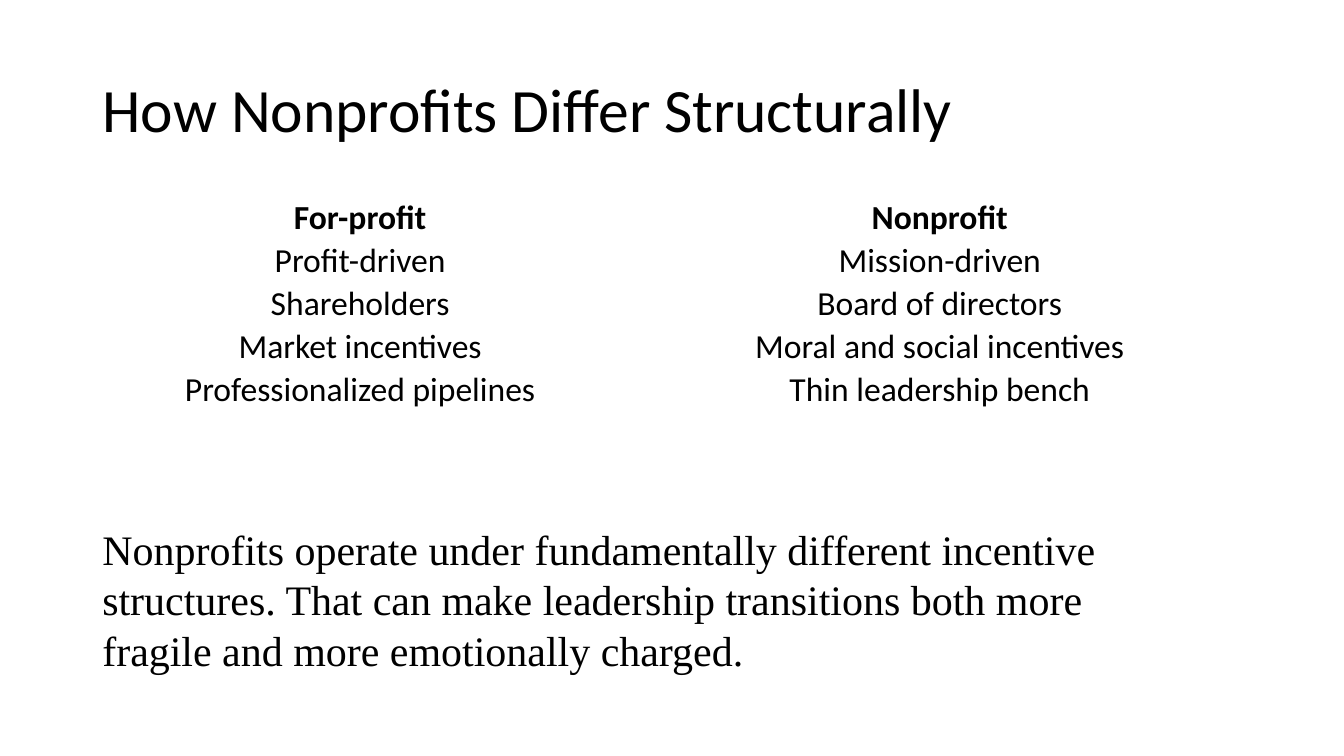
from pptx import Presentation
from pptx.dml.color import RGBColor
from pptx.enum.text import MSO_ANCHOR, PP_ALIGN
from pptx.util import Emu, Pt

PX = 9525
BLACK = "000000"
ROWS = [
    ("For-profit", "Nonprofit"),
    ("Profit-driven", "Mission-driven"),
    ("Shareholders", "Board of directors"),
    ("Market incentives", "Moral and social incentives"),
    ("Professionalized pipelines", "Thin leadership bench"),
]


def px(n):
    return Emu(n * PX)


def color(value):
    return RGBColor.from_string(value)


def add_text(p, text, size, font="Calibri", bold=False, align=PP_ALIGN.LEFT):
    p.alignment = align
    r = p.add_run()
    r.text = text
    r.font.name = font
    r.font.size = Pt(size)
    r.font.bold = bold
    r.font.color.rgb = color(BLACK)


def add_title(s, x, y, w, h):
    sp = s.shapes.title
    sp.left, sp.top, sp.width, sp.height = map(px, (x, y, w, h))
    tf = sp.text_frame
    tf.vertical_anchor = MSO_ANCHOR.MIDDLE
    p = tf.paragraphs[0]
    p.line_spacing = 0.9
    add_text(p, "How Nonprofits Differ Structurally", 44)


def add_comparison(s, x, y, w, h):
    table = s.shapes.add_table(len(ROWS), 2, px(x), px(y), px(w), px(h)).table
    table.first_row = False
    table.horz_banding = False
    for i, texts in enumerate(ROWS):
        table.rows[i].height = px(h // len(ROWS))
        for j, text in enumerate(texts):
            cell = table.cell(i, j)
            cell.fill.background()
            cell.vertical_anchor = MSO_ANCHOR.MIDDLE
            cell.margin_left = cell.margin_right = px(1)
            cell.margin_top = cell.margin_bottom = px(1)
            p = cell.text_frame.paragraphs[0]
            add_text(p, text, 24, bold=i == 0, align=PP_ALIGN.CENTER)


def add_conclusion(s, x, y, w, h):
    tf = s.shapes.add_textbox(px(x), px(y), px(w), px(h)).text_frame
    tf.word_wrap = True
    add_text(
        tf.paragraphs[0],
        "Nonprofits operate under fundamentally different incentive structures. "
        "That can make leadership transitions both more fragile and more "
        "emotionally charged.",
        30,
        font="Times New Roman",
    )


def main():
    prs = Presentation()
    prs.slide_width, prs.slide_height = px(1280), px(720)
    s = prs.slides.add_slide(prs.slide_layouts[5])
    s.background.fill.solid()
    s.background.fill.fore_color.rgb = color("FFFFFF")
    add_title(s, 88, 38, 1104, 139)
    add_comparison(s, 67, 187, 1104, 205)
    add_conclusion(s, 88, 494, 1063, 156)
    prs.save("out.pptx")


if __name__ == "__main__":
    main()
